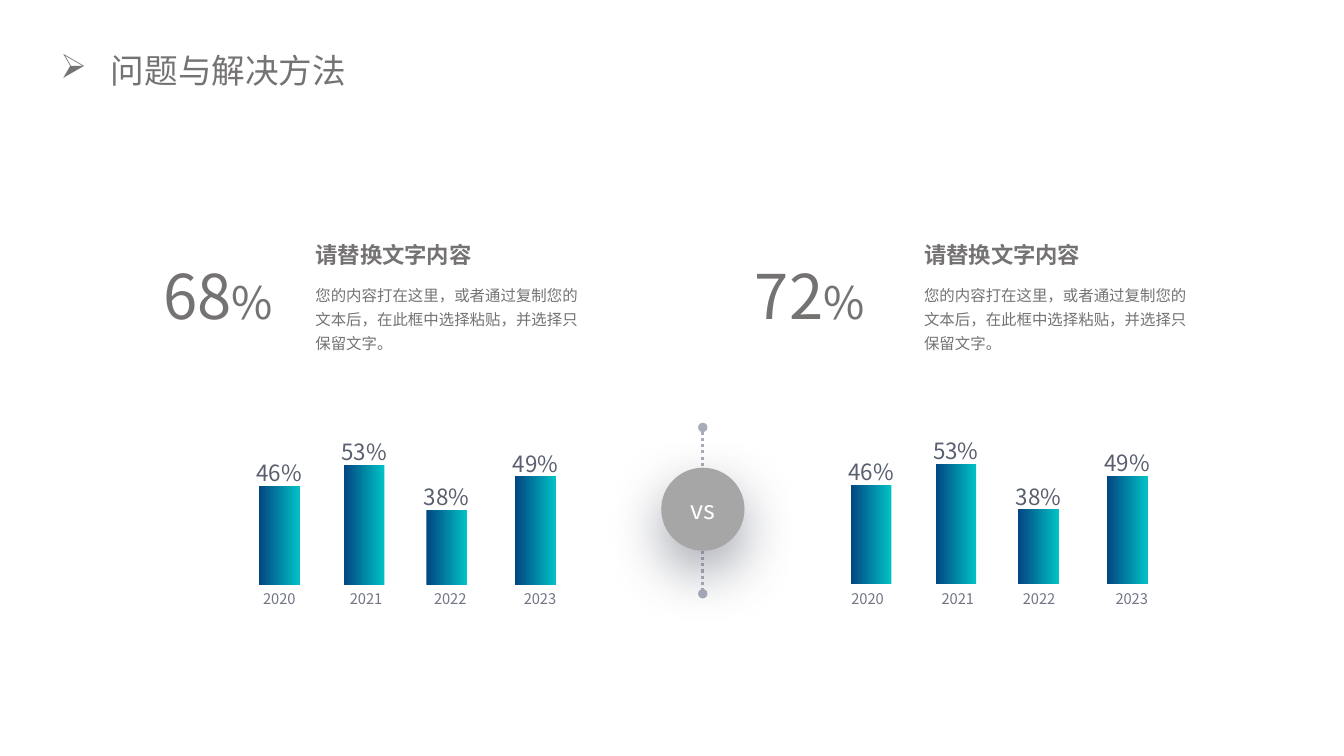
from lxml.etree import SubElement
from pptx import Presentation
from pptx.dml.color import RGBColor
from pptx.enum.dml import MSO_LINE
from pptx.enum.shapes import MSO_CONNECTOR, MSO_SHAPE
from pptx.enum.text import MSO_ANCHOR, MSO_AUTO_SIZE, PP_ALIGN
from pptx.oxml.ns import qn
from pptx.util import Pt

TEXT_GRAY = RGBColor(0x75, 0x72, 0x72)
SLATE = RGBColor(0x59, 0x5F, 0x6F)
YEAR_GRAY = RGBColor(0x72, 0x75, 0x86)
AXIS_GRAY = RGBColor(0xA8, 0xAC, 0xB9)
BADGE_GRAY = RGBColor(0xA6, 0xA6, 0xA6)
WHITE = RGBColor(0xFF, 0xFF, 0xFF)
NAVY = RGBColor(0x02, 0x45, 0x81)
TEAL = RGBColor(0x01, 0xC2, 0xC6)

HEADING = "请替换文字内容"
BODY = "您的内容打在这里，或者通过复制您的文本后，在此框中选择粘贴，并选择只保留文字。"

BAR_WIDTH = 29
# year, value label, bar left within the panel, bar height
BARS = [
    ("2020", "46%", 0, 70.6),
    ("2021", "53%", 60.6, 85.7),
    ("2022", "38%", 119.6, 53.3),
    ("2023", "49%", 183, 77.4),
]


class Deck:
    font_name = "Noto Sans CJK SC"

    def __init__(self, slide):
        self.slide = slide

    def style(self, paragraph, size, color, bold=False, align=None):
        font = paragraph.font
        font.name, font.size, font.bold = self.font_name, Pt(size), bold
        font.color.rgb = color
        if align is not None:
            paragraph.alignment = align
        defaults = paragraph._p.pPr.find(qn("a:defRPr"))
        SubElement(defaults, qn("a:ea")).set("typeface", self.font_name)

    def text(self, parts, box, size, color, wrap=True, bold=False, align=None,
             spacing=None, parent=None):
        """Add a text box; parts is a string or a list of (string, size)."""
        shapes = (parent or self.slide).shapes
        label = shapes.add_textbox(*[Pt(v) for v in box])
        frame = label.text_frame
        frame.word_wrap = wrap
        frame.auto_size = MSO_AUTO_SIZE.SHAPE_TO_FIT_TEXT
        paragraph = frame.paragraphs[0]
        self.style(paragraph, size, color, bold, align)
        if spacing:
            paragraph.line_spacing = spacing
        for words, run_size in [(parts, size)] if isinstance(parts, str) else parts:
            run = paragraph.add_run()
            run.text = words
            if run_size != size:
                run.font.size = Pt(run_size)
        return frame

    def title(self, words, box):
        frame = self.text(words, box, 24, TEXT_GRAY)
        frame.vertical_anchor = MSO_ANCHOR.MIDDLE
        frame.margin_left = frame.margin_right = 0
        frame.margin_top = frame.margin_bottom = 0
        properties = frame.paragraphs[0]._p.get_or_add_pPr()
        properties.set("marL", str(Pt(36)))
        properties.set("indent", str(Pt(-36)))
        bullet = SubElement(properties, qn("a:buChar"))
        bullet.set("char", "➢")
        properties.insert(0, bullet)

    def bar(self, group, left, top, height):
        bar = group.shapes.add_shape(
            MSO_SHAPE.RECTANGLE, Pt(left), Pt(top), Pt(BAR_WIDTH), Pt(height))
        bar.shadow.inherit = False
        bar.line.fill.background()
        bar.fill.gradient()
        bar.fill.gradient_angle = 0
        for stop, color in zip(bar.fill.gradient_stops, (NAVY, TEAL)):
            stop.color.rgb = color

    def bar_panel(self, left, base, year_shifts):
        group = self.slide.shapes.add_group_shape()
        for (year, value, offset, height), shift in zip(BARS, year_shifts):
            bar_left, top = left + offset, base - height
            center = bar_left + BAR_WIDTH / 2
            self.bar(group, bar_left, top, height)
            self.text(value, (center - 23.75, top - 22.5, 47.5, 26.6), 16, SLATE,
                      wrap=False, align=PP_ALIGN.CENTER, parent=group)
            self.text(year, (center + shift - 35, 417.6, 70, 20), 10.5, YEAR_GRAY,
                      align=PP_ALIGN.CENTER, parent=group)

    def summary(self, number, number_left, text_left):
        self.text([(number, 44), ("%", 32)], (number_left, 180.7, 95, 60.5), 44,
                  TEXT_GRAY, wrap=False)
        self.text(HEADING, (text_left, 168.5, 142, 26.6), 16, TEXT_GRAY, bold=True)
        self.text(BODY, (text_left, 196.6, 206.6, 59), 11, TEXT_GRAY, spacing=1.3)

    def dotted_axis(self, x, top, bottom):
        axis = self.slide.shapes.add_connector(
            MSO_CONNECTOR.STRAIGHT, Pt(x), Pt(top), Pt(x), Pt(bottom))
        axis.line.color.rgb = AXIS_GRAY
        axis.line.width = Pt(2.25)
        axis.line.dash_style = MSO_LINE.ROUND_DOT
        properties = axis._element.spPr
        for end in ("a:headEnd", "a:tailEnd"):
            SubElement(properties.find(qn("a:ln")), qn(end)).set("type", "oval")
        SubElement(properties, qn("a:effectLst"))

    def badge(self, words, box):
        badge = self.slide.shapes.add_shape(MSO_SHAPE.OVAL, *[Pt(v) for v in box])
        badge.fill.solid()
        badge.fill.fore_color.rgb = BADGE_GRAY
        badge.line.fill.background()
        badge.shadow.inherit = False
        effects = badge._element.spPr.find(qn("a:effectLst"))
        shadow = SubElement(effects, qn("a:outerShdw"), blurRad=str(Pt(40)),
                            dist=str(Pt(15)), dir="5400000", algn="t", rotWithShape="0")
        tint = SubElement(shadow, qn("a:srgbClr"), val=str(SLATE))
        SubElement(tint, qn("a:alpha"), val="55000")
        frame = badge.text_frame
        frame.vertical_anchor = MSO_ANCHOR.MIDDLE
        frame.text = words
        self.style(frame.paragraphs[0], 18, WHITE, align=PP_ALIGN.CENTER)


def main():
    presentation = Presentation()
    presentation.slide_width, presentation.slide_height = Pt(960), Pt(540)
    deck = Deck(presentation.slides.add_slide(presentation.slide_layouts[6]))
    deck.dotted_axis(502, 305.3, 424.1)
    deck.badge("vs", (472.3, 334.1, 59.5, 59.3))
    deck.summary("68", 109.4, 218.2)
    deck.bar_panel(185, 417.6, (0, 1.4, 2.5, 3.2))
    deck.summary("72", 532.1, 653)
    deck.bar_panel(607.7, 417.1, (-2.5, 1.4, 0.4, 3.2))
    deck.title("问题与解决方法", (43.2, 36, 211.7, 28.8))
    presentation.save("out.pptx")


if __name__ == "__main__":
    main()
